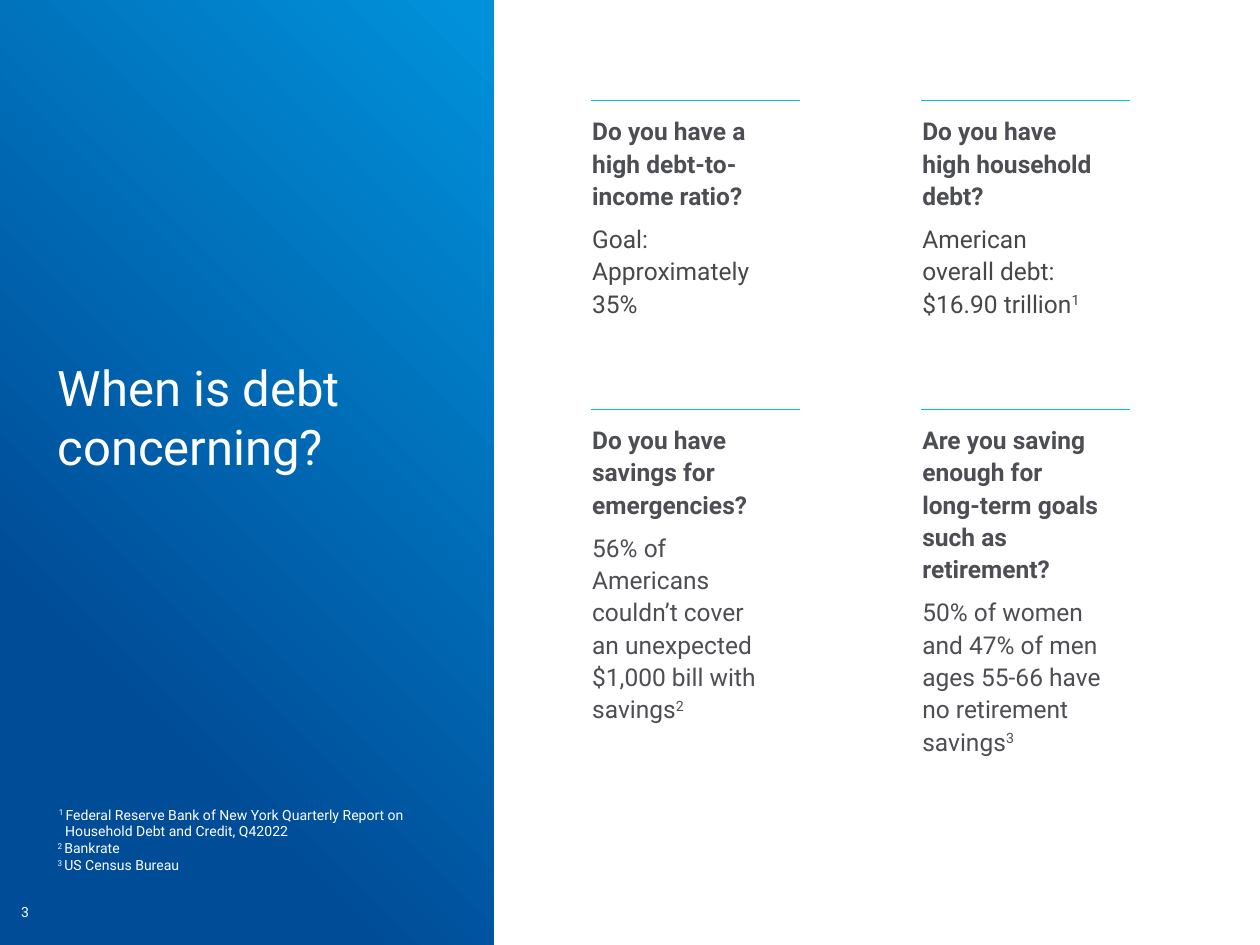
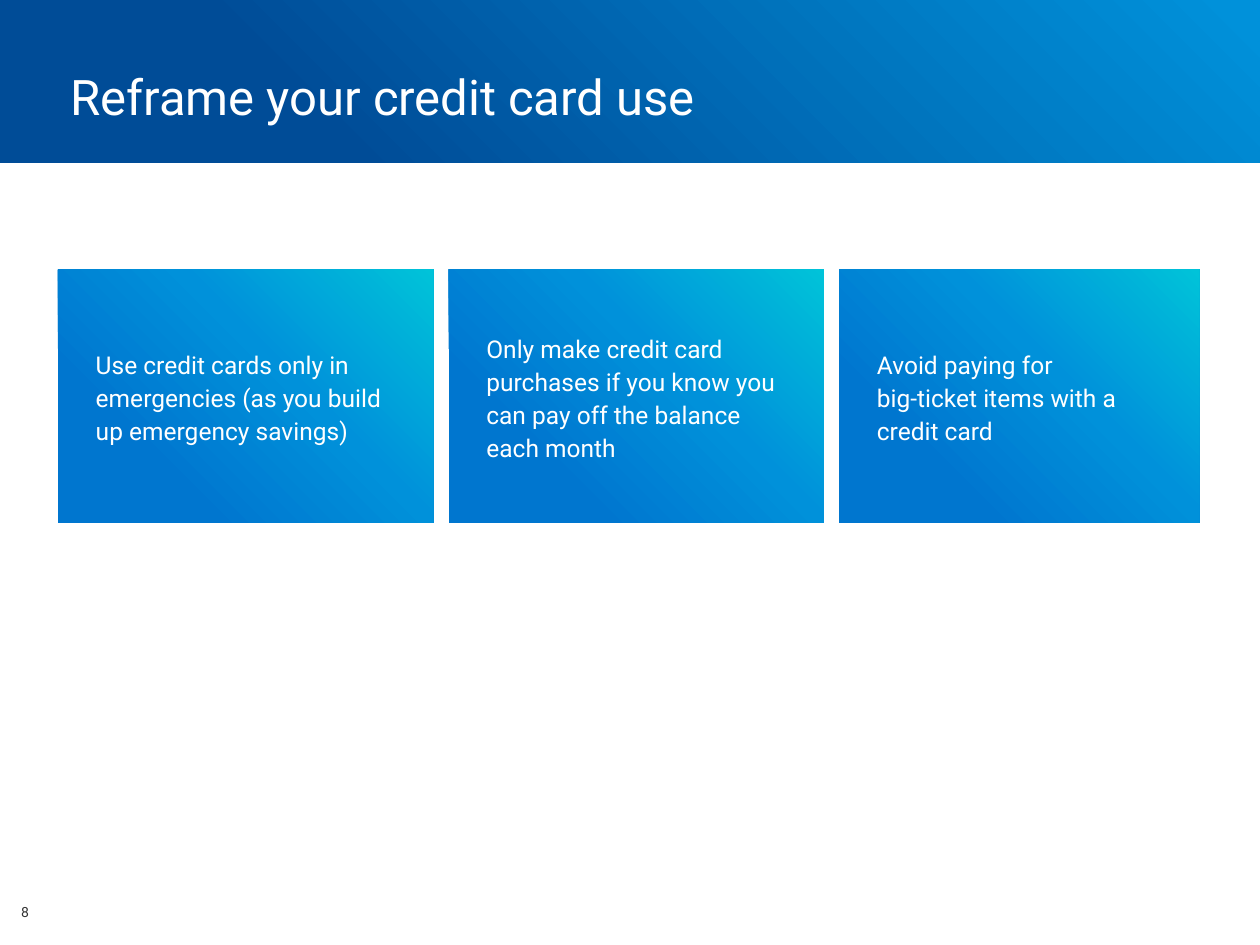
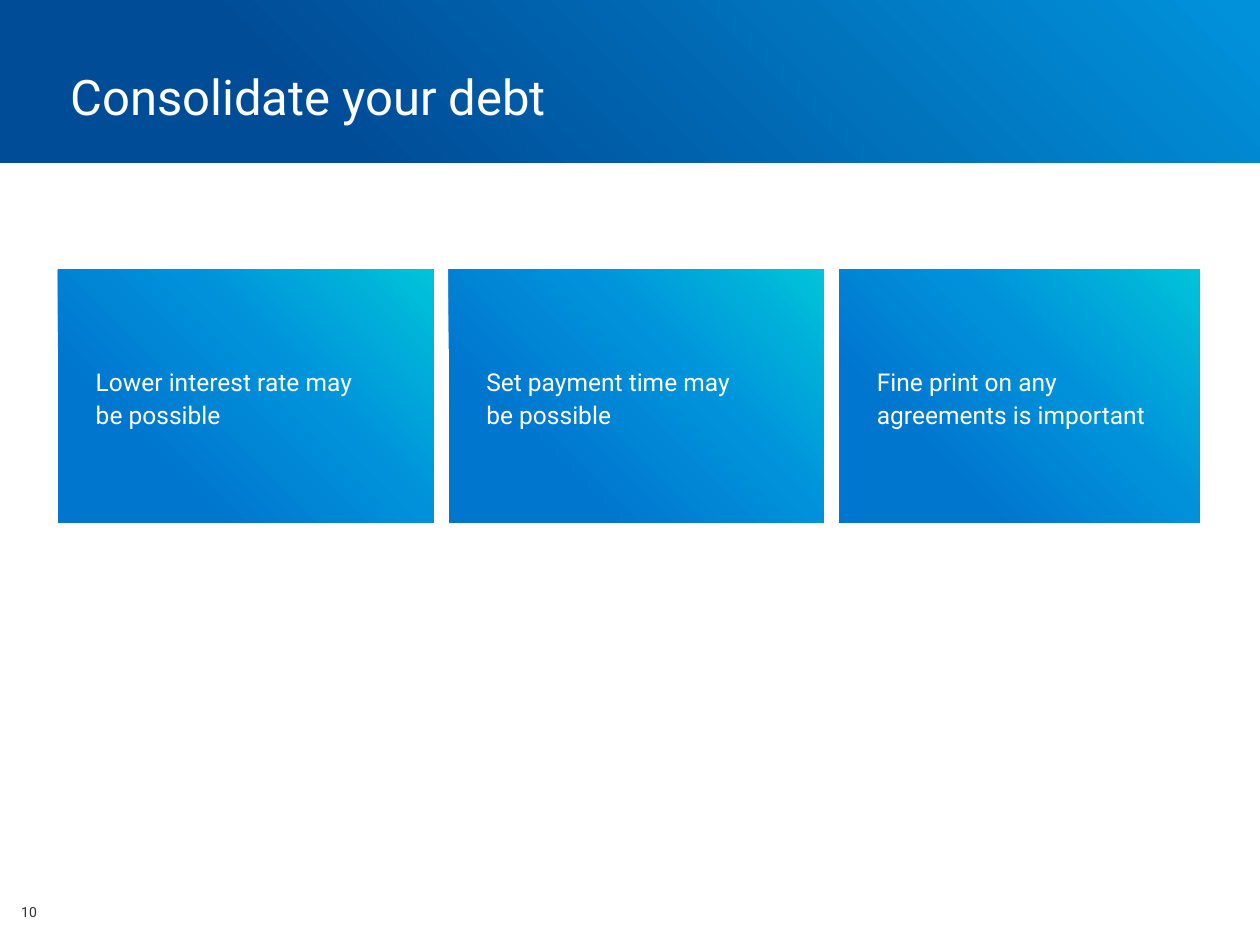
from copy import deepcopy
from dataclasses import dataclass

from pptx import Presentation
from pptx.dml.color import RGBColor
from pptx.enum.shapes import MSO_CONNECTOR, MSO_SHAPE
from pptx.enum.text import MSO_ANCHOR, PP_ALIGN
from pptx.oxml.ns import qn
from pptx.oxml.xmlchemy import OxmlElement
from pptx.util import Emu, Inches, Pt

RECT = MSO_SHAPE.RECTANGLE
LINE = MSO_CONNECTOR.STRAIGHT
TOP, MID, LOW = MSO_ANCHOR.TOP, MSO_ANCHOR.MIDDLE, MSO_ANCHOR.BOTTOM
LEFT = PP_ALIGN.LEFT

WIDE, HIGH = Inches(10), Inches(7.5)


@dataclass(frozen=True)
class Theme:
    font: str = "Roboto"
    white: str = "FFFFFF"
    ink: str = "4D4E53"
    gray: str = "464747"
    dark: str = "333333"
    rule: str = "00C4D9"
    deep: tuple = ((25, "004C97"), (98, "0091DA"))
    bright: tuple = ((25, "0076CF"), (60, "0091DA"), (100, "00C3D9"))
    title: int = 28
    body: int = 14
    small: int = 8


T = Theme()


@dataclass(frozen=True)
class Box:
    """Left, top, width and height in percent of the slide."""
    x: float
    y: float
    w: float
    h: float

    def emu(self) -> tuple:
        return across(self.x), down(self.y), across(self.w), down(self.h)


@dataclass(frozen=True)
class Para:
    """One paragraph; text between ^ marks is raised."""
    text: str
    bold: bool = False
    color: str = ""
    hang: bool = False


@dataclass(frozen=True)
class Topic:
    """A ruled question with its answer, at a grid column and row."""
    col: int
    row: int
    ask: str
    reply: str
    tone: str


@dataclass(frozen=True)
class Deck:
    """A slide of three cards under a title band."""
    page: int
    title: str
    cards: tuple


# Grids, in percent of the slide
PANEL = Box(0, 0, 39.2, 100)
BAND = Box(0, 0, 100, 17.2)
PAGE = Box(0.7, 94.93, 37.1, 3.2)
COLS, ROWS = (46.9, 73.1), (10.67, 43.33)
RULE = 16.6
CARD_X, CARD_Y, CARD_H, STEP = 4.6, 28.53, 26.8, 31
CARD_W = (29.8, 29.8, 28.6)

TOPICS = (
    Topic(0, 1, "Do you have savings for emergencies?",
          "56% of Americans couldn’t cover an unexpected $1,000 bill with savings^2^", T.ink),
    Topic(1, 1, "Are you saving enough for long-term goals such as retirement?",
          "50% of women and 47% of men ages 55-66 have no retirement savings^3^", T.ink),
    Topic(0, 0, "Do you have a high debt-to-income ratio?",
          "Goal: Approximately 35%", T.gray),
    Topic(1, 0, "Do you have high household debt?",
          "American overall debt: $16.90 trillion^1^", T.gray),
)

NOTES = (
    Para("^1 ^Federal Reserve Bank of New York Quarterly Report on "
         "Household Debt and Credit, Q42022", hang=True),
    Para("^2 ^Bankrate"),
    Para("^3 ^US Census Bureau"),
)

DECKS = (
    Deck(8, "Reframe your credit card use", (
        "Use credit cards only in emergencies (as you build up emergency savings)",
        "Only make credit card purchases if you know you can pay off the balance each month",
        "Avoid paying for\nbig-ticket items with a credit card")),
    Deck(10, "Consolidate your debt", (
        "Lower interest rate may\nbe possible",
        "Set payment time may\nbe possible",
        "Fine print on any agreements is important")),
)


def across(share: float) -> Emu:
    return Emu(round(WIDE * share / 100))


def down(share: float) -> Emu:
    return Emu(round(HIGH * share / 100))


def write(shape, paras, *, size=T.body, color=T.white, lead=None, after=0,
          anchor=TOP, pad=(0.1, 0.05, 0.1, 0.05)) -> None:
    """Fill a shape with a string or a series of paragraphs."""
    frame = shape.text_frame
    frame.word_wrap = True
    frame.vertical_anchor = anchor
    (frame.margin_left, frame.margin_top,
     frame.margin_right, frame.margin_bottom) = map(Inches, pad)
    items = (Para(paras),) if isinstance(paras, str) else paras
    for i, item in enumerate(items):
        para = frame.add_paragraph() if i else frame.paragraphs[0]
        para.alignment = LEFT
        para.space_after = Pt(after)
        if lead:
            para.line_spacing = lead
        if item.hang:
            props = para._p.get_or_add_pPr()
            props.set("marL", str(Inches(0.06)))
            props.set("indent", str(Inches(-0.05)))
        for j, piece in enumerate(item.text.split("^")):
            for k, part in enumerate(piece.split("\n")):
                if k:
                    para.add_line_break()
                if not part:
                    continue
                run = para.add_run()
                run.text = part
                run.font.name = T.font
                run.font.size = Pt(size)
                run.font.bold = item.bold
                run.font.color.rgb = RGBColor.from_string(item.color or color)
                if j % 2:
                    run._r.get_or_add_rPr().set("baseline", "30000")


def label(shapes, box: Box, paras, **style) -> None:
    write(shapes.add_textbox(*box.emu()), paras, **style)


def block(shapes, box: Box, stops: tuple):
    """Draw a rectangle shaded from bottom left to top right."""
    shape = shapes.add_shape(RECT, *box.emu())
    shape.shadow.inherit = False
    shape.line.fill.background()
    fill = shape.fill
    fill.gradient()
    fill.gradient_angle = 45
    series = shape._element.spPr.find(".//" + qn("a:gsLst"))
    for _ in stops[2:]:
        series.append(deepcopy(series[0]))
    for stop, (place, color) in zip(fill.gradient_stops, stops):
        stop.position = place / 100
        stop.color.rgb = RGBColor.from_string(color)
    return shape


def number(shapes, page: int, color: str) -> None:
    label(shapes, PAGE, str(page), size=T.small, color=color)


def topic(shapes, item: Topic) -> None:
    x, y = COLS[item.col], ROWS[item.row]
    group = shapes.add_group_shape().shapes
    rule = group.add_connector(LINE, across(x), down(y), across(x + RULE), down(y))
    rule.line.color.rgb = RGBColor.from_string(T.rule)
    rule.line.width = Pt(0.75)
    rule._element.spPr.append(OxmlElement("a:effectLst"))
    label(group, Box(x - 2.9, y, 21.3, 10),
          (Para(item.ask, bold=True), Para(item.reply, color=item.tone)),
          color=T.ink, lead=1.1, after=6, pad=(0.3, 0.1, 0.4, 0.1))


def debt(shapes) -> None:
    """Side panel with title and notes, then the grid of questions."""
    block(shapes, PANEL, T.deep)
    label(shapes, Box(3.6, 37.2, 25.9, 14.93), "When is debt concerning?", size=T.title)
    for item in TOPICS:
        topic(shapes, item)
    number(shapes, 3, T.white)
    label(shapes, Box(3.6, 84.53, 33.6, 8.53), NOTES, size=T.small, anchor=LOW)


def trio(shapes, deck: Deck) -> None:
    """Title band over a row of three cards."""
    number(shapes, deck.page, T.dark)
    block(shapes, BAND, T.deep)
    for i, (text, wide) in enumerate(zip(deck.cards, CARD_W)):
        card = block(shapes, Box(CARD_X + i * STEP, CARD_Y, wide, CARD_H), T.bright)
        write(card, text, lead=Pt(18.8), anchor=MID, pad=(0.3, 0.05, 0.3, 0.05))
    label(shapes, Box(CARD_X, 7.07, 95.4, 6.67), deck.title, size=T.title, lead=0.9)


def main() -> None:
    show = Presentation()
    show.slide_width, show.slide_height = WIDE, HIGH
    blank = show.slide_layouts[6]
    debt(show.slides.add_slide(blank).shapes)
    for deck in DECKS:
        trio(show.slides.add_slide(blank).shapes, deck)
    show.save("out.pptx")


if __name__ == "__main__":
    main()
